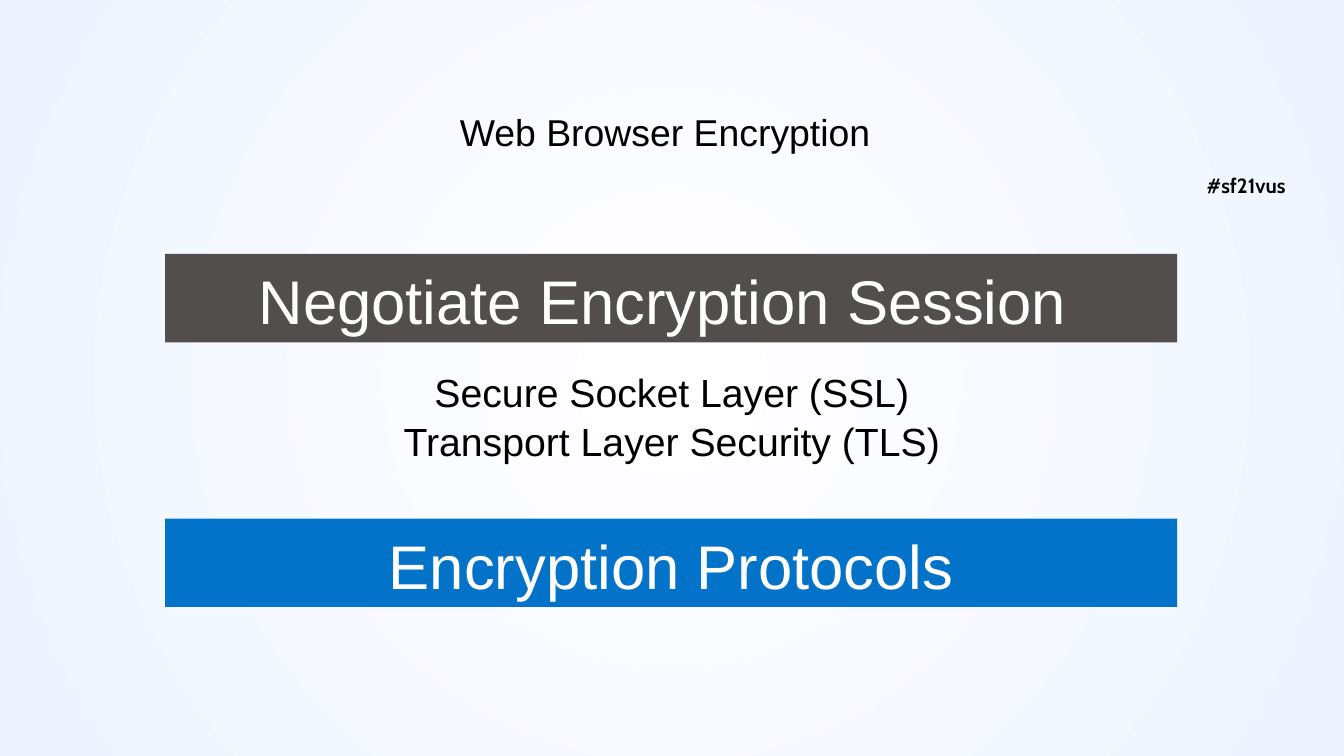
import dataclasses

import lxml.etree
import pptx
import pptx.dml.color
import pptx.enum.shapes
import pptx.enum.text
import pptx.oxml.ns
import pptx.util

ALIGN = pptx.enum.text.PP_ALIGN
ANCHOR = pptx.enum.text.MSO_ANCHOR


@dataclasses.dataclass(frozen=True)
class Theme:
    black: str = "000000"
    white: str = "FFFFFF"
    glow_edge: str = "EEF4FF"
    session_bar: str = "534E4E"
    protocol_bar: str = "0373C9"
    font: str = "Arial"
    tag_font: str = "Cabin"
    title_size: int = 20
    bar_size: int = 33
    body_size: int = 21
    tag_size: int = 11
    line_spacing: float = 1.05


THEME = Theme()

# Grid of 100 columns by 100 rows over the slide
WIDTH = pptx.util.Inches(10)
HEIGHT = pptx.util.Inches(5.625)
BAR_LEFT, BAR_WIDTH, BAR_HEIGHT = 12.3, 75.3, 11.7


def rgb(code):
    return pptx.dml.color.RGBColor.from_string(code)


def grid(left, top, width, height):
    """Turn columns and rows into slide lengths."""
    return (round(left * WIDTH / 100), round(top * HEIGHT / 100),
            round(width * WIDTH / 100), round(height * HEIGHT / 100))


def write(shape, text, size, color, font=THEME.font, bold=False,
          align=ALIGN.CENTER, anchor=ANCHOR.TOP, insets=(0.1, 0.05, 0.1, 0.05)):
    frame = shape.text_frame
    frame.text = text
    frame.word_wrap = True
    frame.auto_size = pptx.enum.text.MSO_AUTO_SIZE.NONE
    frame.vertical_anchor = anchor
    (frame.margin_left, frame.margin_top,
     frame.margin_right, frame.margin_bottom) = map(pptx.util.Inches, insets)
    for paragraph in frame.paragraphs:
        paragraph.alignment = align
        paragraph.line_spacing = THEME.line_spacing
        for run in paragraph.runs:
            run.font.name = font
            run.font.size = pptx.util.Pt(size)
            run.font.bold = bold
            run.font.color.rgb = rgb(color)


def paint_background(slide):
    """Circular glow from the centre of the slide."""
    fill = slide.background.fill
    fill.gradient()
    for stop, color in zip(fill.gradient_stops, (THEME.white, THEME.glow_edge)):
        stop.color.rgb = rgb(color)
    qn = pptx.oxml.ns.qn
    gradient = slide.background._cSld.find(".//" + qn("a:gradFill"))
    gradient.remove(gradient.find(qn("a:lin")))
    circle = lxml.etree.SubElement(gradient, qn("a:path"), path="circle")
    centre = dict.fromkeys("ltrb", "50000")
    lxml.etree.SubElement(circle, qn("a:fillToRect"), centre)


def place_title(slide, text):
    title = slide.shapes.title
    title.left, title.top, title.width, title.height = grid(5.8, 13.3, 88.4, 6.4)
    write(title, text, THEME.title_size, THEME.black,
          insets=(0, 0.05, 0.1, 0.05))


def add_bar(slide, top, text, color):
    bar = slide.shapes.add_shape(
        pptx.enum.shapes.MSO_SHAPE.RECTANGLE,
        *grid(BAR_LEFT, top, BAR_WIDTH, BAR_HEIGHT))
    bar.shadow.inherit = False
    bar.fill.solid()
    bar.fill.fore_color.rgb = rgb(color)
    bar.line.fill.background()
    write(bar, text, THEME.bar_size, THEME.white, anchor=ANCHOR.MIDDLE)


def add_label(slide, place, text, size, **style):
    label = slide.shapes.add_textbox(*grid(*place))
    write(label, text, size, THEME.black, **style)


def main():
    deck = pptx.Presentation()
    deck.slide_width, deck.slide_height = WIDTH, HEIGHT
    slide = deck.slides.add_slide(deck.slide_layouts.get_by_name("Title Only"))
    paint_background(slide)

    # Heading and event tag
    place_title(slide, "Web Browser Encryption")
    add_label(slide, (88.8, 21, 11.2, 6.9), "#sf21vus", THEME.tag_size,
              font=THEME.tag_font, bold=True, align=ALIGN.LEFT,
              insets=(0.1, 0.1, 0.1, 0.1))

    # Session step and the protocols behind it
    add_bar(slide, 33.6, "Negotiate Encryption Session ", THEME.session_bar)
    add_bar(slide, 68.6, "Encryption Protocols", THEME.protocol_bar)
    add_label(slide, (25.5, 47.5, 49, 14.4),
              "Secure Socket Layer (SSL)\nTransport Layer Security (TLS)",
              THEME.body_size)

    deck.save("out.pptx")


if __name__ == "__main__":
    main()
